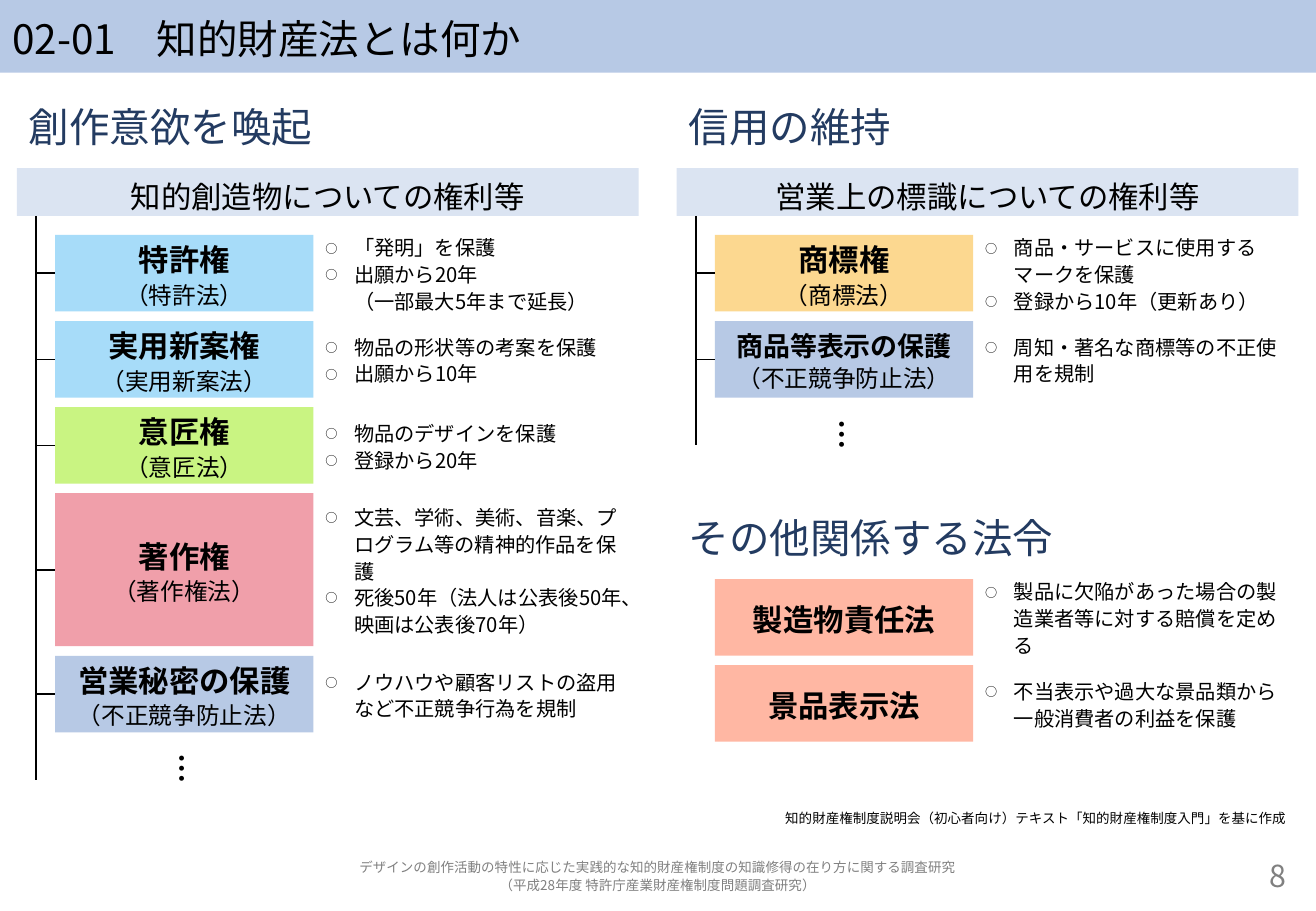
from lxml.etree import SubElement
from pptx import Presentation
from pptx.dml.color import RGBColor
from pptx.enum.lang import MSO_LANGUAGE_ID
from pptx.enum.shapes import MSO_CONNECTOR, MSO_SHAPE
from pptx.enum.text import MSO_ANCHOR, MSO_AUTO_SIZE, PP_ALIGN
from pptx.oxml.ns import qn
from pptx.util import Mm, Pt

FONT = "Noto Sans CJK JP"
BLACK = RGBColor(0x00, 0x00, 0x00)
GRAY = RGBColor(0x80, 0x80, 0x80)
NAVY = RGBColor(0x23, 0x3B, 0x61)
BLUE = RGBColor(0xB7, 0xC9, 0xE5)
PALE_BLUE = RGBColor(0xDB, 0xE4, 0xF2)
SKY = RGBColor(0xA7, 0xDC, 0xF9)
LIME = RGBColor(0xC9, 0xF4, 0x82)
ROSE = RGBColor(0xF0, 0x9F, 0xAA)
AMBER = RGBColor(0xFC, 0xD8, 0x90)
SALMON = RGBColor(0xFF, 0xB7, 0xA3)

SLIDE_W, SLIDE_H = Pt(780), Pt(540)
LEFT, RIGHT, COLUMN_W = 3.55, 141.5, 130
HEADING_TOP, RELATED_TOP, HEADING_H, HEADING_STEP = 19.15, 105.1, 12, 16
BAR_H, BAR_GAP = 10, 4
SPINE_X, CARD_X, CARD_W = 4, 8, 54
NOTE_X = CARD_X + CARD_W
NOTE_W = COLUMN_W - NOTE_X
ROW_H, ROW_GAP = 16, 2
FOOTER_TOP, FOOTER_W, FOOTER_H = 179.1, 268, 8

CREATION = [
    ("特許権", 18, "（特許法）", SKY, 1,
     ["「発明」を保護", "出願から20年\v（一部最大5年まで延長）"]),
    ("実用新案権", 18, "（実用新案法）", SKY, 1,
     ["物品の形状等の考案を保護", "出願から10年"]),
    ("意匠権", 18, "（意匠法）", LIME, 1,
     ["物品のデザインを保護", "登録から20年"]),
    ("著作権", 18, "（著作権法）", ROSE, 2,
     ["文芸、学術、美術、音楽、プログラム等の精神的作品を保護",
      "死後50年（法人は公表後50年、映画は公表後70年）"]),
    ("営業秘密の保護", 18, "（不正競争防止法）", BLUE, 1,
     ["ノウハウや顧客リストの盗用など不正競争行為を規制"]),
]
CREDIT = [
    ("商標権", 18, "（商標法）", AMBER, 1,
     ["商品・サービスに使用するマークを保護", "登録から10年（更新あり）"]),
    ("商品等表示の保護", 16, "（不正競争防止法）", BLUE, 1,
     ["周知・著名な商標等の不正使用を規制"]),
]
RELATED = [
    ("製造物責任法", 18, None, SALMON, 1,
     ["製品に欠陥があった場合の製造業者等に対する賠償を定める"]),
    ("景品表示法", 18, None, SALMON, 1,
     ["不当表示や過大な景品類から一般消費者の利益を保護"]),
]


def write(shape, lines, size, color=BLACK, align=PP_ALIGN.LEFT,
          anchor=MSO_ANCHOR.MIDDLE, bold=False, spacing=1.1, before=0):
    """Fill a shape with paragraphs in one style."""
    frame = shape.text_frame
    frame.text = "\n".join(lines)
    frame.word_wrap = True
    frame.auto_size = MSO_AUTO_SIZE.NONE
    frame.vertical_anchor = anchor
    for paragraph in frame.paragraphs:
        paragraph.alignment = align
        paragraph.line_spacing = spacing
        paragraph.space_before = Pt(before)
        for run in paragraph.runs:
            font = run.font
            font.name, font.size, font.bold = FONT, Pt(size), bold
            font.color.rgb = color
            font.language_id = MSO_LANGUAGE_ID.JAPANESE
            SubElement(font._element, qn("a:ea"), typeface=FONT)
    return frame


def add_text(slide, left, top, width, height):
    """Add an empty text box placed in millimetres."""
    return slide.shapes.add_textbox(Mm(left), Mm(top), Mm(width), Mm(height))


def add_block(slide, left, top, width, height, color):
    """Add a flat rectangle placed in millimetres."""
    block = slide.shapes.add_shape(
        MSO_SHAPE.RECTANGLE, Mm(left), Mm(top), Mm(width), Mm(height))
    block.shadow.inherit = False
    block.fill.solid()
    block.fill.fore_color.rgb = color
    block.line.fill.background()
    return block


def add_line(slide, x1, y1, x2, y2):
    """Add a thin black line without a shadow."""
    line = slide.shapes.add_connector(
        MSO_CONNECTOR.STRAIGHT, Mm(x1), Mm(y1), Mm(x2), Mm(y2))
    line.line.color.rgb = BLACK
    line.line.width = Pt(1)
    SubElement(line._element.spPr, qn("a:effectLst"))
    return line


def add_heading(slide, left, top, heading):
    """Place the large heading of a section."""
    write(add_text(slide, left, top, COLUMN_W, HEADING_H), [heading], 24,
          NAVY, anchor=MSO_ANCHOR.TOP, before=4.8)


def add_row(slide, left, top, height, row):
    """Place one right with its law and its explanation, and return its card."""
    name, size, law, color, _, points = row
    card = add_block(slide, left + CARD_X, top, CARD_W, height, color)
    frame = write(card, [name, law] if law else [name], size,
                  align=PP_ALIGN.CENTER, bold=True)
    for run in (run for law_line in frame.paragraphs[1:] for run in law_line.runs):
        run.font.size, run.font.bold = Pt(14), False
    notes = write(add_text(slide, left + NOTE_X, top, NOTE_W, height), points, 12)
    for point in notes.paragraphs:
        properties = point._p.get_or_add_pPr()
        properties.set("marL", str(Mm(6)))
        properties.set("indent", str(-Mm(6)))
        SubElement(properties, qn("a:buSzPct"), val="60000")
        SubElement(properties, qn("a:buFont"), typeface=FONT)
        SubElement(properties, qn("a:buChar"), char="○")
    return card


def add_rows(slide, left, top, rows):
    """Stack rows downwards and return the cards with their middles, and the end."""
    cards = []
    for row in rows:
        height = ROW_H * row[4]
        cards.append((add_row(slide, left, top, height, row), top + height / 2))
        top += height + ROW_GAP
    return cards, top


def add_tree(slide, left, top, heading, category, rows):
    """Place a headed category whose rights hang from a spine."""
    add_heading(slide, left, top, heading)
    bar_top = top + HEADING_STEP
    bar = add_block(slide, left, bar_top, COLUMN_W, BAR_H, PALE_BLUE)
    write(bar, [category], 18, align=PP_ALIGN.CENTER,
          anchor=MSO_ANCHOR.TOP, before=3.6)
    spine_top = bar_top + BAR_H
    cards, end = add_rows(slide, left, spine_top + BAR_GAP, rows)
    spine = left + SPINE_X
    for card, middle in cards:
        branch = add_line(slide, spine, middle, left + CARD_X, middle)
        branch.end_connect(card, 1)
    more = add_text(slide, left + CARD_X, end, CARD_W, ROW_H)
    frame = write(more, ["…"], 18, align=PP_ALIGN.CENTER, bold=True)
    frame._txBody.bodyPr.set("vert", "eaVert")
    add_line(slide, spine, spine_top, spine, end + ROW_H / 2)


def add_related(slide, left, top, heading, rows):
    """Place a headed list of laws without a spine."""
    add_heading(slide, left, top, heading)
    add_rows(slide, left, top + HEADING_STEP, rows)


def add_title(slide, title):
    """Turn the title placeholder into the band across the top."""
    band = slide.shapes.title
    band.left, band.top, band.width, band.height = 0, 0, SLIDE_W, Mm(15.2)
    band.fill.solid()
    band.fill.fore_color.rgb = BLUE
    write(band, [title], 24)


def add_footer(slide):
    """Place the source note, the study name and the page number."""
    source = add_text(slide, LEFT, FOOTER_TOP - 12, FOOTER_W, FOOTER_H)
    write(source, ["知的財産権制度説明会（初心者向け）テキスト「知的財産権制度入門」を基に作成"],
          8, align=PP_ALIGN.RIGHT, spacing=1)
    study = add_text(slide, LEFT, FOOTER_TOP, FOOTER_W, FOOTER_H)
    write(study, ["デザインの創作活動の特性に応じた実践的な知的財産権制度の知識修得の在り方に関する調査研究",
                  "（平成28年度 特許庁産業財産権制度問題調査研究）"],
          8, GRAY, PP_ALIGN.CENTER)
    page = add_text(slide, LEFT + FOOTER_W - 34, FOOTER_TOP - 0.4, 34, FOOTER_H)
    write(page, ["8"], 18, GRAY, PP_ALIGN.RIGHT)


def main():
    """Build the slide and save it."""
    deck = Presentation()
    deck.slide_width, deck.slide_height = SLIDE_W, SLIDE_H
    slide = deck.slides.add_slide(deck.slide_layouts[5])
    add_title(slide, "02-01　知的財産法とは何か")
    add_tree(slide, LEFT, HEADING_TOP, "創作意欲を喚起",
             "知的創造物についての権利等", CREATION)
    add_tree(slide, RIGHT, HEADING_TOP, "信用の維持",
             "営業上の標識についての権利等", CREDIT)
    add_related(slide, RIGHT, RELATED_TOP, "その他関係する法令", RELATED)
    add_footer(slide)
    deck.save("out.pptx")


if __name__ == "__main__":
    main()
